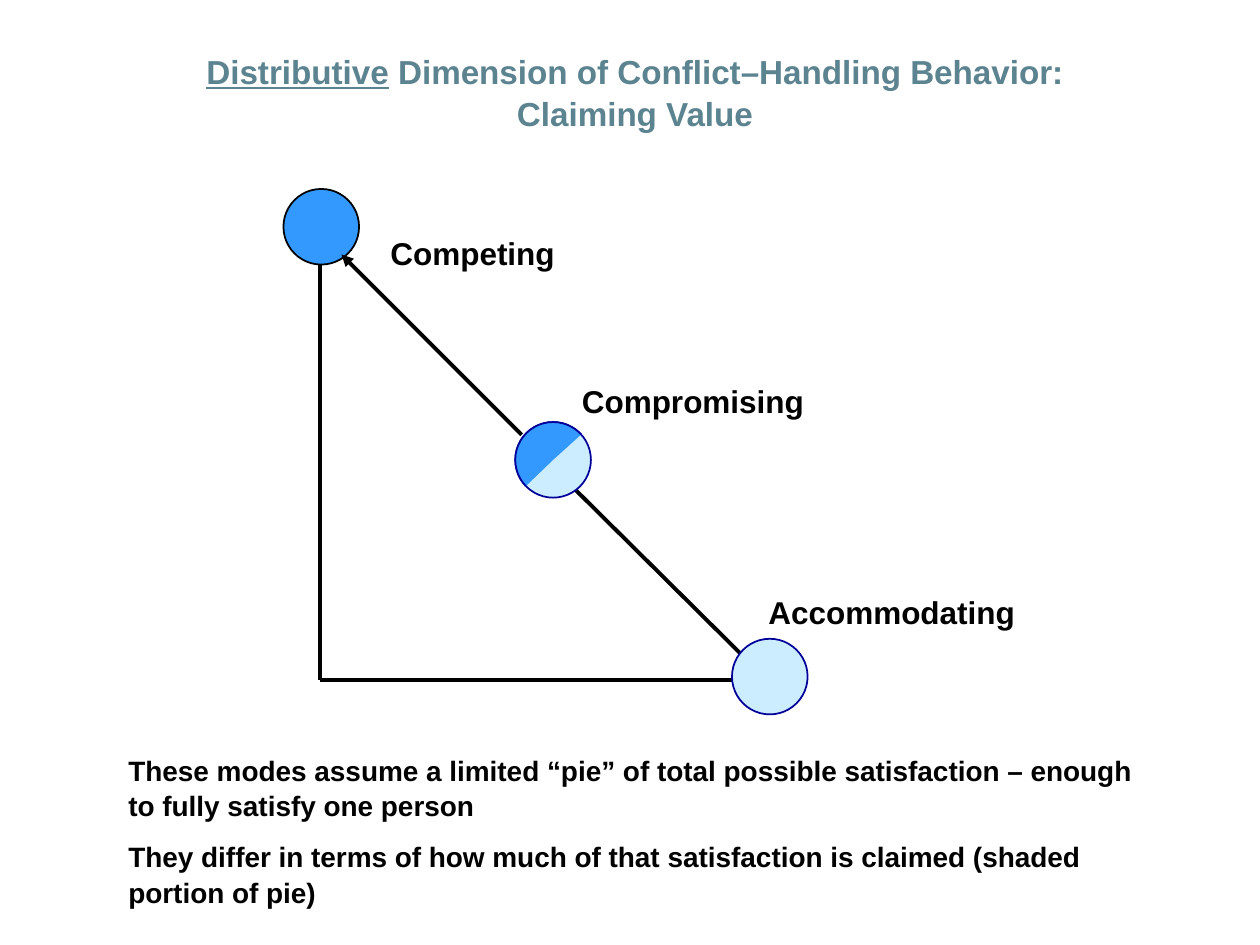
from pptx import Presentation
from pptx.dml.color import RGBColor
from pptx.enum.shapes import MSO_CONNECTOR, MSO_SHAPE
from pptx.enum.text import MSO_ANCHOR, MSO_AUTO_SIZE, PP_ALIGN
from pptx.oxml.ns import qn
from pptx.util import Inches, Pt
from lxml import etree

LINE = MSO_CONNECTOR.STRAIGHT
OVAL, PIE, ARC = MSO_SHAPE.OVAL, MSO_SHAPE.PIE, MSO_SHAPE.ARC
TOP, FIXED = MSO_ANCHOR.TOP, MSO_AUTO_SIZE.NONE
CENTER, LEFT = PP_ALIGN.CENTER, PP_ALIGN.LEFT

BLACK, NAVY, TEAL = "000000", "000099", "5C8390"
FULL, PALE = "3399FF", "CCECFF"
SIZE = 0.6  # diameter of each pie


def color(code):
    return RGBColor.from_string(code)


def write(para, text, size, code, **extra):
    """Add a bold Arial run to a paragraph."""
    run = para.add_run()
    run.text = text
    run.font.color.rgb = color(code)
    style = {"name": "Arial", "size": Pt(size), "bold": True, **extra}
    for key, value in style.items():
        setattr(run.font, key, value)


prs = Presentation()
prs.slide_width, prs.slide_height = Inches(10), Inches(7.5)
slide = prs.slides.add_slide(prs.slide_layouts[5])
shapes = slide.shapes

# Title
title = shapes.title
place = {"left": 0.83, "top": 0.34, "width": 8.42, "height": 0.74}
for key, value in place.items():
    setattr(title, key, Inches(value))
frame = title.text_frame
frame.word_wrap, frame.auto_size, frame.vertical_anchor = True, FIXED, TOP
head = frame.paragraphs[0]
write(head, "Distributive", 19, TEAL, underline=True)
write(head, " Dimension of Conflict–Handling Behavior:", 19, TEAL, underline=False)
write(frame.add_paragraph(), "Claiming Value", 19, TEAL)
for para in frame.paragraphs:
    para.alignment, para.line_spacing = CENTER, 1.05
    para.space_before = Pt(0)

# Notes under the triangle
box = shapes.add_textbox(Inches(0.92), Inches(5.92), Inches(8.25), Inches(1.3))
frame = box.text_frame
frame.word_wrap = True
notes = [
    "These modes assume a limited “pie” of total possible satisfaction – enough "
    "to fully satisfy one person",
    "They differ in terms of how much of that satisfaction is claimed (shaded "
    "portion of pie)",
]
for i, note in enumerate(notes):
    para = frame.add_paragraph() if i else frame.paragraphs[0]
    para.alignment, para.line_spacing = LEFT, 1.05
    para.space_before = Pt(9 * i)
    write(para, note, 16, BLACK)

# Triangle; the upper half of its long side points at the full pie
sides = [
    (2.54, 1.81, 2.54, 5.4, False),
    (2.54, 5.4, 6.12, 5.4, False),
    (5.88, 5.19, 4.56, 3.88, False),
    (4.14, 3.45, 2.71, 2.02, True),
]
# Pies: left, top, fill, line
pies = [
    (2.25, 1.5, FULL, BLACK),
    (4.09, 3.35, PALE, NAVY),
    (5.81, 5.07, PALE, NAVY),
]
arrow = None
for *ends, tip in sides:
    side = shapes.add_connector(LINE, *map(Inches, ends))
    side.line.color.rgb, side.line.width = color(BLACK), Pt(2.25)
    if tip:
        arrow = side
        etree.SubElement(side.line._get_or_add_ln(), qn("a:tailEnd"), type="triangle")
    etree.SubElement(side._element.spPr, qn("a:effectLst"))

for left, top, fill, edge in pies:
    pie = shapes.add_shape(OVAL, *map(Inches, (left, top, SIZE, SIZE)))
    pie.shadow.inherit = False
    pie.fill.solid()
    pie.fill.fore_color.rgb = color(fill)
    pie.line.color.rgb, pie.line.width = color(edge), Pt(1)
shapes._spTree.append(arrow._element)  # arrowhead lies over the full pie

# Claimed half of the middle pie, then its rim
left, top = pies[1][:2]
for kind in (PIE, ARC):
    half = shapes.add_shape(kind, *map(Inches, (left, top, SIZE, SIZE)))
    half.shadow.inherit = False
    for i, angle in enumerate((136, 318)):
        half.adjustments[i] = angle * 0.6  # 60000ths of a degree / 100000
    if kind == PIE:
        half.fill.solid()
        half.fill.fore_color.rgb = color(FULL)
        half.line.fill.background()
    else:
        half.fill.background()
        half.line.color.rgb, half.line.width = color(NAVY), Pt(1)

# Names of the modes
modes = [
    ("Competing", 3, 1.81, 1.51),
    ("Compromising", 4.52, 2.98, 1.97),
    ("Accommodating", 6, 4.66, 2.16),
]
for name, left, top, width in modes:
    label = shapes.add_textbox(*map(Inches, (left, top, width, 0.4)))
    label.text_frame.word_wrap = False
    write(label.text_frame.paragraphs[0], name, 18, BLACK)

prs.save("out.pptx")
